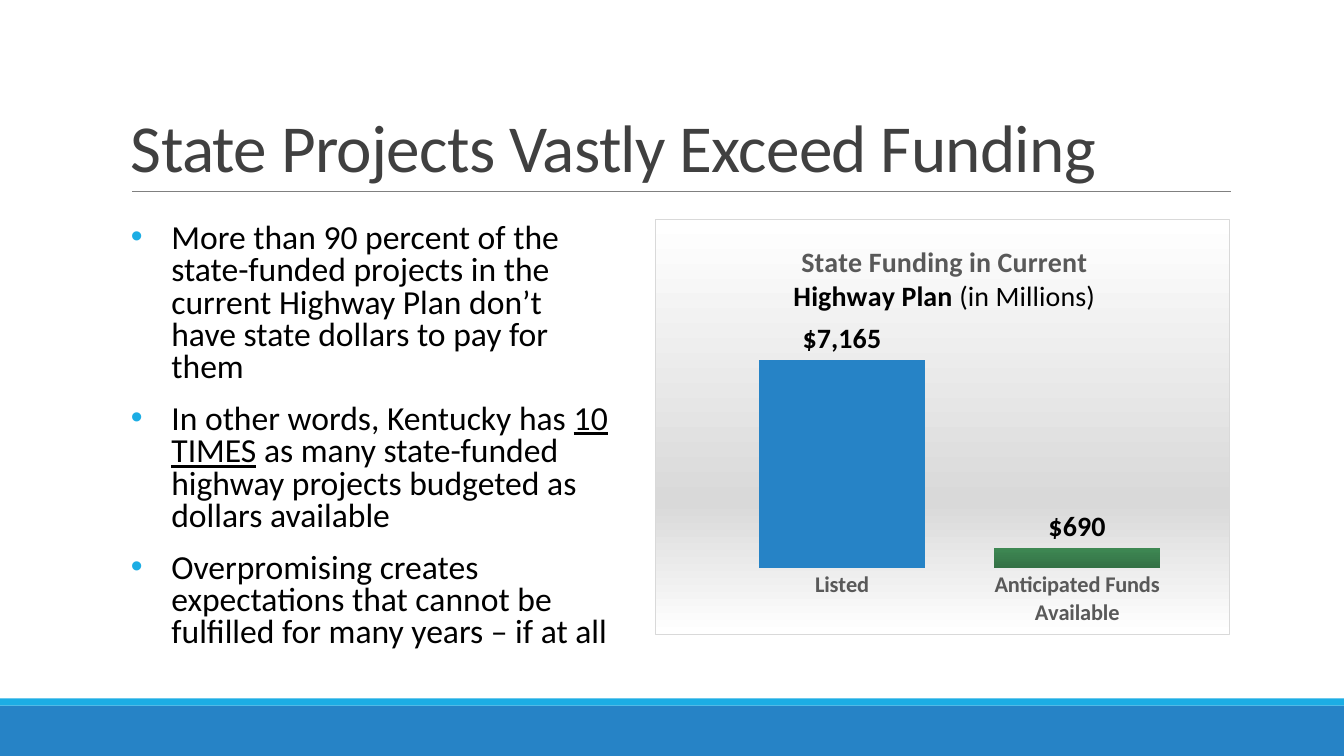
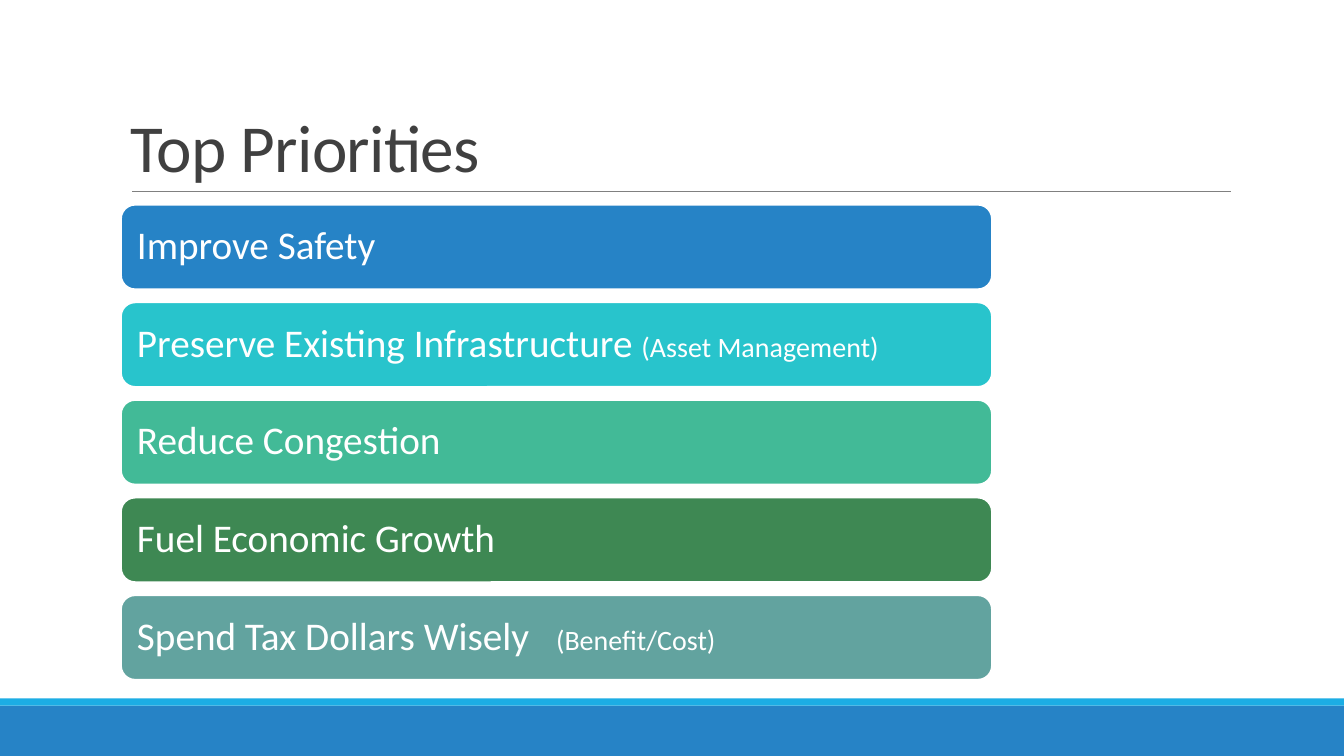
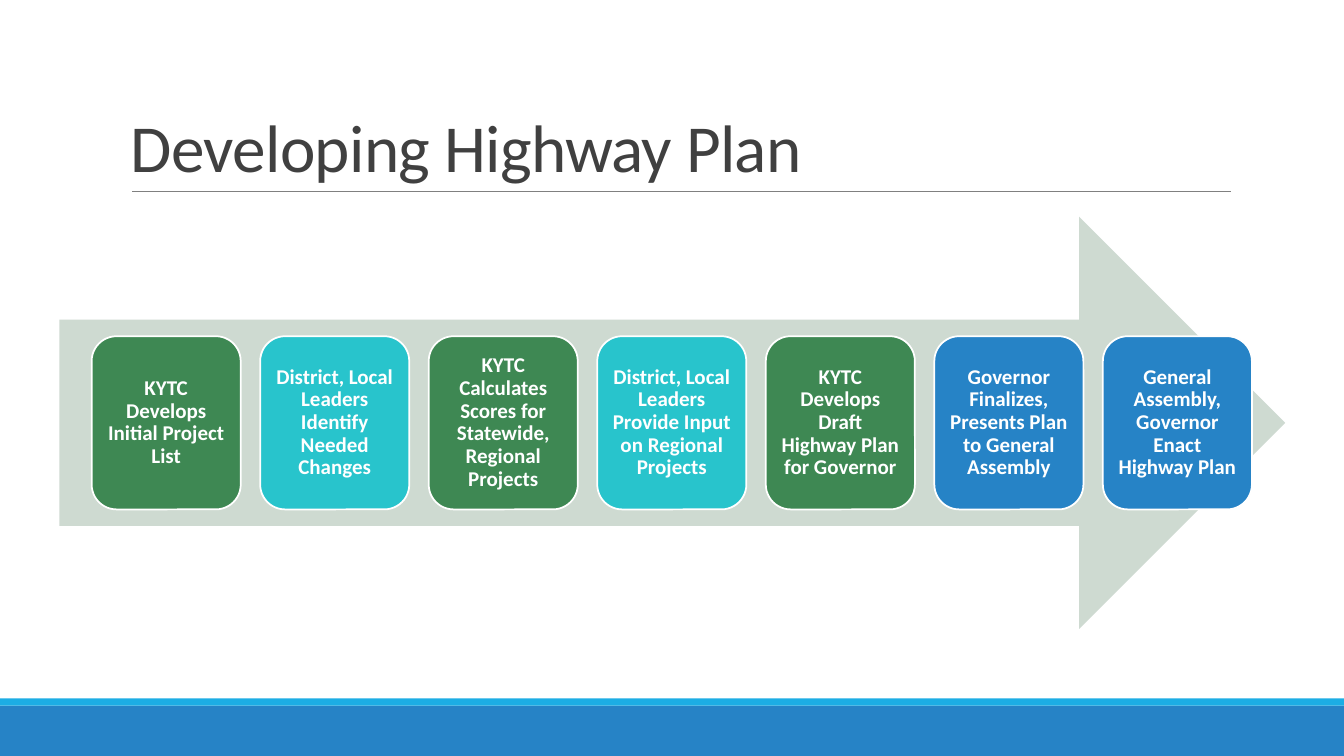
from collections import namedtuple

from pptx import Presentation
from pptx.chart.data import CategoryChartData
from pptx.dml.color import RGBColor
from pptx.enum.chart import XL_CHART_TYPE as ChartType, XL_LABEL_POSITION as LabelPosition
from pptx.enum.chart import XL_TICK_MARK as TickMark
from pptx.enum.shapes import MSO_CONNECTOR as Connector, MSO_SHAPE as Preset
from pptx.enum.text import MSO_ANCHOR as Anchor, PP_ALIGN as Align
from pptx.oxml import parse_xml
from pptx.oxml.ns import nsdecls, qn
from pptx.util import Cm, Pt

Box = namedtuple("Box", "left top width height")

FONT = "Calibri"
COLOURS = {
    "white": "FFFFFF", "black": "000000", "title": "404040", "label": "595959",
    "rule": "808080", "frame": "D9D9D9", "blue": "2683C6", "sky": "1CADE4",
    "teal": "28C4CC", "mint": "42BA97", "green": "3E8853", "pine": "347246",
    "slate": "62A39F", "arrow": "CEDAD1",
}

PAGE = Box(0, 0, 33.87, 19.05)
TITLE = Box(3.05, 0.79, 27.94, 4.04)
BODY = Box(3.05, 5.51, 12.27, 11.89)
CHART = Box(16.51, 5.51, 14.48, 10.49)
PRIORITIES = Box(3.05, 5.16, 21.95, 11.97)
PROCESS = Box(1.5, 5.46, 30.89, 10.39)

FUNDING_POINTS = [
    [("More than 90 percent of the state-funded projects in the current "
      "Highway Plan don’t have state dollars to pay for them", False)],
    [("In other words, Kentucky has ", False), ("10 TIMES", True),
     (" as many state-funded highway projects budgeted as dollars available", False)],
    [("Overpromising creates expectations that cannot be fulfilled "
      "for many years – if at all", False)],
]
PRIORITY_ROWS = [
    ("Improve Safety", "", "blue"),
    ("Preserve Existing Infrastructure ", "(Asset Management)", "teal"),
    ("Reduce Congestion", "", "mint"),
    ("Fuel Economic Growth", "", "green"),
    ("Spend Tax Dollars Wisely\t", "(Benefit/Cost)", "slate"),
]
PLAN_STEPS = [
    ("KYTC Develops Initial Project List", "green"),
    ("District, Local Leaders Identify Needed Changes", "teal"),
    ("KYTC Calculates Scores for Statewide, Regional Projects", "green"),
    ("District, Local Leaders Provide Input on Regional Projects", "teal"),
    ("KYTC Develops Draft Highway Plan for Governor", "green"),
    ("Governor Finalizes, Presents Plan to General Assembly", "blue"),
    ("General Assembly, Governor Enact Highway Plan", "blue"),
]


def rgb(colour):
    """Return the named colour."""
    return RGBColor.from_string(COLOURS[colour])


def assign(target, **values):
    """Set each given attribute on the target."""
    for attribute, value in values.items():
        setattr(target, attribute, value)


def set_font(font, size, colour, **values):
    """Format a font in the deck's typeface."""
    assign(font, name=FONT, size=Pt(size), **values)
    font.color.rgb = rgb(colour)


def add_run(paragraph, text, size, colour, **values):
    """Append formatted text to a paragraph."""
    run = paragraph.add_run()
    run.text = text
    set_font(run.font, size, colour, **values)
    return run


def set_frame(frame, side, edge, anchor):
    """Set wrapping, insets in centimetres and vertical anchor."""
    assign(frame, word_wrap=True, vertical_anchor=anchor,
           margin_left=Cm(side), margin_right=Cm(side),
           margin_top=Cm(edge), margin_bottom=Cm(edge))


def add_properties(paragraph, *fragments):
    """Append drawing elements to the paragraph properties."""
    for fragment in fragments:
        tag, rest = fragment.split(" ", 1)
        paragraph._p.get_or_add_pPr().append(parse_xml(f"<a:{tag} {nsdecls('a')} {rest}"))


def add_block(slide, preset, box, colour, outline=None):
    """Draw a flat filled shape in the box."""
    block = slide.shapes.add_shape(preset, *map(Cm, box))
    block.shadow.inherit = False
    block.fill.solid()
    block.fill.fore_color.rgb = rgb(colour)
    if outline:
        block.line.color.rgb = rgb(outline)
        block.line.width = Pt(1.25)
    else:
        block.line.fill.background()
    return block


def add_card(slide, box, colour, inset):
    """Draw a rounded card and return its paragraph."""
    frame = add_block(slide, Preset.ROUNDED_RECTANGLE, box, colour, "white").text_frame
    set_frame(frame, inset, inset, Anchor.MIDDLE)
    paragraph = frame.paragraphs[0]
    paragraph.line_spacing = 0.9
    return paragraph


def add_base(deck, title):
    """Add a slide with the footer bands, title and rule."""
    slide = deck.slides.add_slide(deck.slide_layouts[6])
    add_block(slide, Preset.RECTANGLE, Box(0, 17.78, PAGE.width, 1.27), "blue")
    add_block(slide, Preset.RECTANGLE, Box(0, 17.6, PAGE.width, 0.18), "sky")
    rule = slide.shapes.add_connector(
        Connector.STRAIGHT, Cm(3.33), Cm(4.83), Cm(31.01), Cm(4.83))
    rule.line.color.rgb = rgb("rule")
    rule.line.width = Pt(0.5)
    rule._element.spPr.append(parse_xml(f"<a:effectLst {nsdecls('a')}/>"))
    frame = slide.shapes.add_textbox(*map(Cm, TITLE)).text_frame
    set_frame(frame, 0.25, 0.13, Anchor.BOTTOM)
    frame.paragraphs[0].line_spacing = 0.85
    heading = add_run(frame.paragraphs[0], title, 48, "title")
    heading._r.get_or_add_rPr().set("spc", "-50")
    return slide


def add_bullets(slide, box, points):
    """Write the bulleted points in the box."""
    frame = slide.shapes.add_textbox(*map(Cm, box)).text_frame
    set_frame(frame, 0, 0.13, Anchor.TOP)
    for index, pieces in enumerate(points):
        paragraph = frame.add_paragraph() if index else frame.paragraphs[0]
        assign(paragraph, line_spacing=0.8, space_before=Pt(12), space_after=Pt(2))
        properties = paragraph._p.get_or_add_pPr()
        properties.set("marL", str(Cm(1.27)))
        properties.set("indent", str(-Cm(1.02)))
        add_properties(
            paragraph,
            f'buClr ><a:srgbClr val="{COLOURS["sky"]}"/></a:buClr>',
            'buFont typeface="Arial"/>', 'buChar char="•"/>')
        for text, underline in pieces:
            add_run(paragraph, text, 24, "black", underline=underline)


def manual_layout(x, y, extent=""):
    """Return a chart layout placed by fractions of the chart area."""
    target = '<c:layoutTarget val="inner"/>' if extent else ""
    return parse_xml(
        f'<c:layout {nsdecls("c")}><c:manualLayout>{target}'
        f'<c:xMode val="edge"/><c:yMode val="edge"/>'
        f'<c:x val="{x}"/><c:y val="{y}"/>{extent}</c:manualLayout></c:layout>')


def fill_chart_area(chart):
    """Give the chart area its gradient and border."""
    stops = "".join(
        f'<a:gs pos="{place}000"><a:srgbClr val="{COLOURS[colour]}"/></a:gs>'
        for place, colour in ((0, "white"), (68, "frame"), (100, "white")))
    chart._chartSpace.find(qn("c:chart")).addnext(parse_xml(
        f'<c:spPr {nsdecls("c", "a")}><a:gradFill><a:gsLst>{stops}</a:gsLst>'
        f'<a:lin ang="5400000" scaled="0"/></a:gradFill><a:ln w="{Pt(0.75)}">'
        f'<a:solidFill><a:srgbClr val="{COLOURS["frame"]}"/></a:solidFill></a:ln></c:spPr>'))


def add_chart_title(chart):
    """Write the two-line chart title."""
    title = chart.chart_title
    title.include_in_layout = False
    first = title.text_frame.paragraphs[0]
    second = title.text_frame.add_paragraph()
    for paragraph in (first, second):
        paragraph.alignment = Align.CENTER
    add_run(first, "State Funding in Current", 20, "label", bold=True)
    add_run(second, "Highway Plan", 20, "black", bold=True)
    add_run(second, " (in Millions)", 20, "black", bold=False)
    element = title._element
    for layout in element.findall(qn("c:layout")):
        element.remove(layout)
    element.find(qn("c:tx")).addnext(manual_layout(0.235, 0.05))


def add_funding_chart(slide, box):
    """Chart listed projects against anticipated funds."""
    funding = CategoryChartData(number_format='"$"#,##0')
    funding.categories = ["Listed", "Anticipated Funds Available"]
    funding.add_series("Series 1", (7165, 690))
    chart = slide.shapes.add_chart(
        ChartType.COLUMN_CLUSTERED, *map(Cm, box), funding).chart
    set_font(chart.font, 10, "black")
    chart.has_legend = False
    fill_chart_area(chart)
    add_chart_title(chart)

    assign(chart.value_axis, visible=False, has_major_gridlines=False,
           minimum_scale=0, maximum_scale=8000)
    categories = chart.category_axis
    assign(categories, major_tick_mark=TickMark.NONE, minor_tick_mark=TickMark.NONE)
    categories.format.line.fill.background()
    set_font(categories.tick_labels.font, 16, "label", bold=True)

    plot = chart.plots[0]
    assign(plot, gap_width=41, vary_by_categories=False, has_data_labels=True)
    assign(plot.data_labels, show_value=True, position=LabelPosition.OUTSIDE_END)
    set_font(plot.data_labels.font, 20, "black", bold=True)
    columns = plot.series[0]
    shade = columns.format.fill
    shade.gradient()
    shade.gradient_angle = 270
    for stop, place, colour in zip(shade.gradient_stops, (0, 1), ("green", "pine")):
        stop.position = place
        stop.color.rgb = rgb(colour)
    listed = columns.points[0].format.fill
    listed.solid()
    listed.fore_color.rgb = rgb("blue")

    area = chart._chartSpace.find(qn("c:chart")).find(qn("c:plotArea"))
    for layout in area.findall(qn("c:layout")):
        area.remove(layout)
    area.insert(0, manual_layout(0.12, 0.28, '<c:w val="0.82"/><c:h val="0.56"/>'))


def add_priorities(slide, box, rows, gap=0.33):
    """Stack one card per priority in the box."""
    height = (box.height - gap * (len(rows) - 1)) / len(rows)
    for index, (label, note, colour) in enumerate(rows):
        top = box.top + index * (height + gap)
        paragraph = add_card(slide, Box(box.left, top, box.width, height), colour, 0.3)
        paragraph.alignment = Align.LEFT
        add_properties(
            paragraph, f'tabLst ><a:tab pos="{Cm(10.56)}" algn="l"/></a:tabLst>')
        add_run(paragraph, label, 28, "white")
        if note:
            add_run(paragraph, note, 20, "white")


def add_process(slide, box, steps, gap=0.49):
    """Line up the step cards on an arrow filling the box."""
    add_block(slide, Preset.RIGHT_ARROW, box, "arrow")
    width = (box.width - 1.65 - gap * (len(steps) - 1)) / len(steps)
    height = box.height * 0.42
    top = box.top + (box.height - height) / 2
    for index, (step, colour) in enumerate(steps):
        left = box.left + 0.81 + index * (width + gap)
        paragraph = add_card(slide, Box(left, top, width, height), colour, 0.15)
        paragraph.alignment = Align.CENTER
        add_run(paragraph, step, 15, "white", bold=True)


def main():
    """Build and save the deck."""
    deck = Presentation()
    assign(deck, slide_width=Cm(PAGE.width), slide_height=Cm(PAGE.height))
    funding = add_base(deck, "State Projects Vastly Exceed Funding")
    add_funding_chart(funding, CHART)
    add_bullets(funding, BODY, FUNDING_POINTS)
    add_priorities(add_base(deck, "Top Priorities"), PRIORITIES, PRIORITY_ROWS)
    add_process(add_base(deck, "Developing Highway Plan"), PROCESS, PLAN_STEPS)
    deck.save("out.pptx")


if __name__ == "__main__":
    main()
